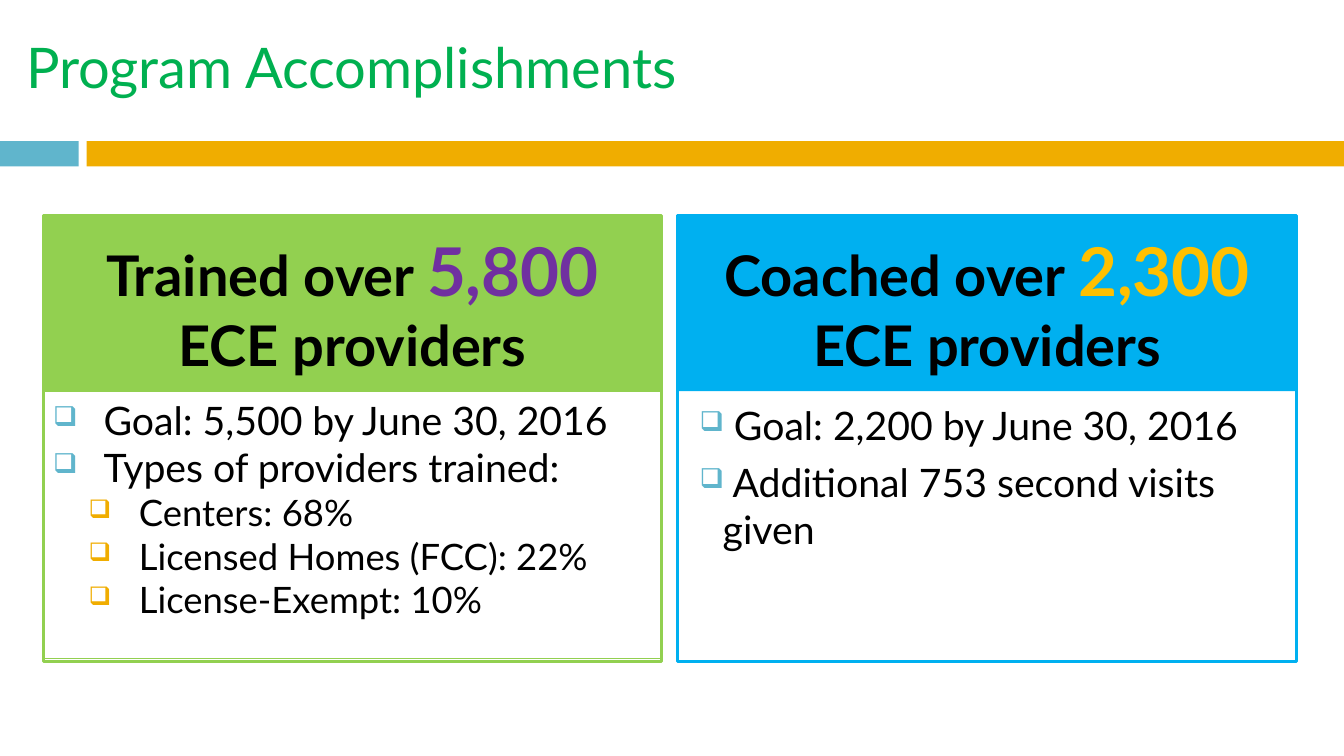
from dataclasses import dataclass
from typing import Optional

from lxml import etree
from pptx import Presentation
from pptx.dml.color import RGBColor
from pptx.enum.shapes import MSO_SHAPE
from pptx.enum.text import MSO_ANCHOR, PP_ALIGN
from pptx.oxml.ns import qn
from pptx.util import Pt

RECT = MSO_SHAPE.RECTANGLE
TOP, MIDDLE = MSO_ANCHOR.TOP, MSO_ANCHOR.MIDDLE
LEFT, CENTER = PP_ALIGN.LEFT, PP_ALIGN.CENTER
PX = 9144  # EMU in one px, 100 px to the inch


@dataclass(frozen=True)
class Theme:
    font: str = "Lato"
    ink: str = "000000"
    title: str = "00B050"
    teal: str = "60B5CC"
    gold: str = "F0AD00"
    green: str = "92D050"
    blue: str = "00B0F0"
    purple: str = "7030A0"
    amber: str = "FFC000"
    head: int = 40
    count: int = 48
    goal: int = 28
    share: int = 26
    frame: float = 2
    thin: float = 0.75


THEME = Theme()


@dataclass(frozen=True)
class Box:
    x: int
    y: int
    w: int
    h: int


@dataclass(frozen=True)
class Span:
    text: str
    size: int
    color: str = THEME.ink
    bold: bool = False


@dataclass(frozen=True)
class Bullet:
    color: str
    indent: int
    hang: int
    level: int = 0


@dataclass(frozen=True)
class Line:
    spans: tuple[Span, ...]
    bullet: Optional[Bullet] = None


@dataclass(frozen=True)
class Card:
    x: int
    w: int
    color: str
    verb: str
    count: str
    accent: str
    lines: tuple[Line, ...]
    body: int
    inset: int
    gap: int = 0
    edge: Optional[str] = None


GOAL = Bullet(THEME.teal, 50, 50)
SHARE = Bullet(THEME.gold, 85, 50, 1)
VISIT = Bullet(THEME.teal, 35, 23)


def item(text: str, size: int, bullet: Bullet) -> Line:
    return Line((Span(text, size),), bullet)


BARS = ((Box(0, 140, 78, 25), THEME.teal), (Box(86, 140, 1247, 25), THEME.gold))
HEAD_Y, HEAD_H, CARD_H = 214, 174, 442
CARDS = (
    Card(43, 613, THEME.green, "Trained", "5,800", THEME.purple, (
        item("Goal: 5,500 by June 30, 2016", THEME.goal, GOAL),
        item("Types of providers trained:", THEME.goal, GOAL),
        item("Centers: 68%", THEME.share, SHARE),
        item("Licensed Homes (FCC): 22%", THEME.share, SHARE),
        item("License-Exempt: 10%", THEME.share, SHARE),
    ), body=265, inset=5, edge=THEME.green),
    Card(672, 614, THEME.blue, "Coached", "2,300", THEME.amber, (
        item(" Goal: 2,200 by June 30, 2016", THEME.goal, VISIT),
        item(" Additional 753 second visits given", THEME.goal, VISIT),
    ), body=268, inset=10, gap=7),
)


def add_rect(slide, box: Box, fill: Optional[str] = None,
             edge: Optional[str] = None, width: float = THEME.thin):
    shape = slide.shapes.add_shape(
        RECT, box.x * PX, box.y * PX, box.w * PX, box.h * PX)
    shape.shadow.inherit = False
    if fill:
        shape.fill.solid()
        shape.fill.fore_color.rgb = RGBColor.from_string(fill)
    else:
        shape.fill.background()
    if edge:
        shape.line.color.rgb = RGBColor.from_string(edge)
        shape.line.width = Pt(width)
    else:
        shape.line.fill.background()
    return shape


def set_bullet(para, bullet: Bullet) -> None:
    para.level = bullet.level
    props = para._p.get_or_add_pPr()
    props.set("marL", str(bullet.indent * PX))
    props.set("indent", str(-bullet.hang * PX))
    color = etree.SubElement(props, qn("a:buClr"))
    etree.SubElement(color, qn("a:srgbClr"), val=bullet.color)
    etree.SubElement(props, qn("a:buSzPct"), val="70000")
    etree.SubElement(props, qn("a:buChar"), char="❑")


def write(shape, lines: tuple[Line, ...], anchor=MIDDLE, align=LEFT,
          inset: int = 10, gap: int = 0) -> None:
    frame = shape.text_frame
    frame.word_wrap = True
    frame.vertical_anchor = anchor
    frame.margin_left = frame.margin_right = 10 * PX
    frame.margin_top = frame.margin_bottom = inset * PX
    for i, line in enumerate(lines):
        para = frame.add_paragraph() if i else frame.paragraphs[0]
        para.alignment = align
        if i and gap:
            para.space_before = Pt(gap)
        if line.bullet:
            set_bullet(para, line.bullet)
        for span in line.spans:
            run = para.add_run()
            run.text = span.text
            run.font.name = THEME.font
            run.font.size = Pt(span.size)
            run.font.bold = span.bold
            run.font.color.rgb = RGBColor.from_string(span.color)


def add_card(slide, card: Card) -> None:
    # List below the heading
    body = add_rect(slide, Box(card.x, HEAD_Y + HEAD_H, card.w, card.body),
                    edge=card.edge)
    write(body, card.lines, TOP, inset=card.inset, gap=card.gap)

    # Heading with the count
    head = add_rect(slide, Box(card.x, HEAD_Y, card.w, HEAD_H), card.color)
    write(head, (Line((
        Span(f"{card.verb} over ", THEME.head, bold=True),
        Span(f"{card.count} ", THEME.count, card.accent, True),
        Span("ECE providers", THEME.head, bold=True),
    )),), align=CENTER)

    # Frame around both
    add_rect(slide, Box(card.x, HEAD_Y, card.w, CARD_H),
             edge=card.color, width=THEME.frame)


def main() -> None:
    deck = Presentation()
    deck.slide_width, deck.slide_height = 1333 * PX, 750 * PX
    slide = deck.slides.add_slide(deck.slide_layouts[6])

    # Band under the title
    for box, fill in BARS:
        add_rect(slide, box, fill)

    # Title
    title = slide.shapes.add_textbox(16 * PX, 18 * PX, 1189 * PX, 95 * PX)
    write(title, (Line((
        Span("Program Accomplishments", THEME.head, THEME.title),)),))

    # Cards
    for card in CARDS:
        add_card(slide, card)
    deck.save("out.pptx")


if __name__ == "__main__":
    main()
